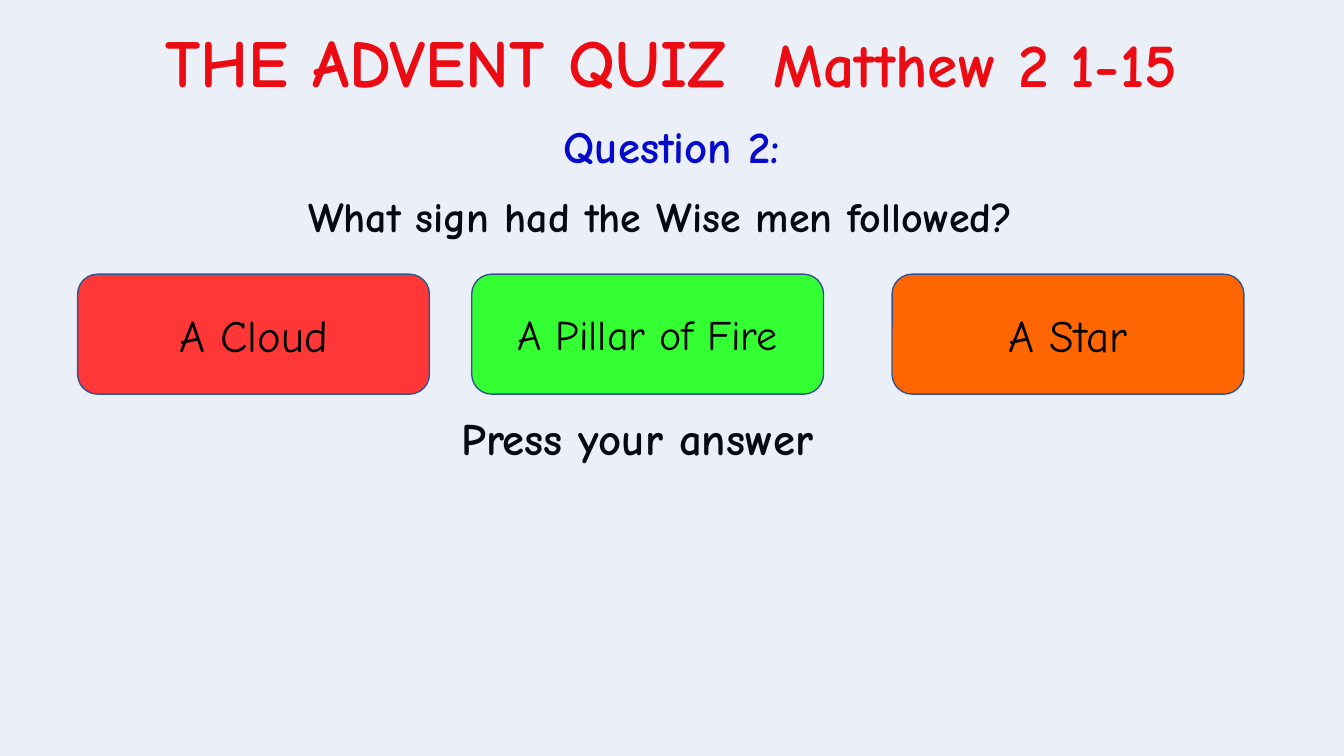
from pptx import Presentation
from pptx.dml.color import RGBColor
from pptx.enum.shapes import MSO_SHAPE as SHAPE
from pptx.enum.text import MSO_ANCHOR as ANCHOR, MSO_AUTO_SIZE as FIT, PP_ALIGN as ALIGN
from pptx.oxml.ns import qn
from pptx.util import Pt
from lxml.etree import SubElement

# Content
FONT = "Comic Neue"
TITLE = [("THE ADVENT QUIZ  ", 48), ("Matthew 2 1-15", 44)]
TITLE_BOX = (26.64, 10.8, 905.76, 65.52)
# text, box, size, colour, paragraph format
LINES = [
    ("What sign had the Wise men followed?", (55.44, 138.24, 833, 85.68), 30, "000000",
     dict(alignment=ALIGN.CENTER, line_spacing=Pt(30), space_before=Pt(10))),
    ("Press your answer", (322.56, 294.48, 484.56, 51.84), 32, "000000",
     dict(alignment=ALIGN.LEFT, line_spacing=0.9, space_before=Pt(7.5))),
    ("Question 2:", (321.12, 81.36, 317.52, 46.08), 32, "0000CC",
     dict(alignment=ALIGN.CENTER)),
]
# text, left, size, fill
ANSWERS = [
    ("A Cloud", 55.44, 32, "FF3737"),
    ("A Pillar of Fire", 336.96, 30, "33FF33"),
    ("A Star", 637.2, 32, "FF6600"),
]
ANSWER_TOP, ANSWER_W, ANSWER_H = 195.84, 251.28, 85.68
TINT_BOX = (-33.84, -43.92, 1021.68, 628.56)
TINT, TINT_ALPHA, BORDER = "4472C4", 10, "325491"


def rgb(value):
    return RGBColor.from_string(value)


def set_all(obj, values):
    for name, value in values.items():
        setattr(obj, name, value)


def add_run(p, text, size, color, bold):
    r = p.add_run()
    r.text = text
    set_all(r.font, dict(name=FONT, size=Pt(size), bold=bold))
    r.font.color.rgb = rgb(color)


def add_box(kind, box, fill):
    sp = slide.shapes.add_shape(kind, *map(Pt, box))
    sp.shadow.inherit = False
    sp.fill.solid()
    sp.fill.fore_color.rgb = rgb(fill)
    sp.line.color.rgb = rgb(BORDER)
    sp.line.width = Pt(1)
    return sp


prs = Presentation()
prs.slide_width, prs.slide_height = Pt(960), Pt(540)
slide = prs.slides.add_slide(prs.slide_layouts[5])

# Title
title = slide.shapes.title
set_all(title, dict(zip(("left", "top", "width", "height"), map(Pt, TITLE_BOX))))
tf = title.text_frame
set_all(tf, dict(word_wrap=False, auto_size=FIT.SHAPE_TO_FIT_TEXT, vertical_anchor=ANCHOR.TOP))
p = tf.paragraphs[0]
p.alignment = ALIGN.CENTER
for text, size in TITLE:
    add_run(p, text, size, "FF0000", True)

# Question and instruction
for text, box, size, color, layout in LINES:
    tf = slide.shapes.add_textbox(*map(Pt, box)).text_frame
    tf.word_wrap = True
    p = tf.paragraphs[0]
    set_all(p, layout)
    add_run(p, text, size, color, True)

# Pale tint over the whole slide
tint = add_box(SHAPE.RECTANGLE, TINT_BOX, TINT)
tint_color = tint.fill._xPr.find(qn("a:solidFill"))[0]
SubElement(tint_color, qn("a:alpha")).set("val", str(TINT_ALPHA * 1000))

# Answer buttons
for text, left, size, fill in ANSWERS:
    sp = add_box(SHAPE.ROUNDED_RECTANGLE, (left, ANSWER_TOP, ANSWER_W, ANSWER_H), fill)
    tf = sp.text_frame
    set_all(tf, dict(word_wrap=True, vertical_anchor=ANCHOR.MIDDLE))
    p = tf.paragraphs[0]
    p.alignment = ALIGN.CENTER
    add_run(p, text, size, "000000", False)

prs.save("out.pptx")
